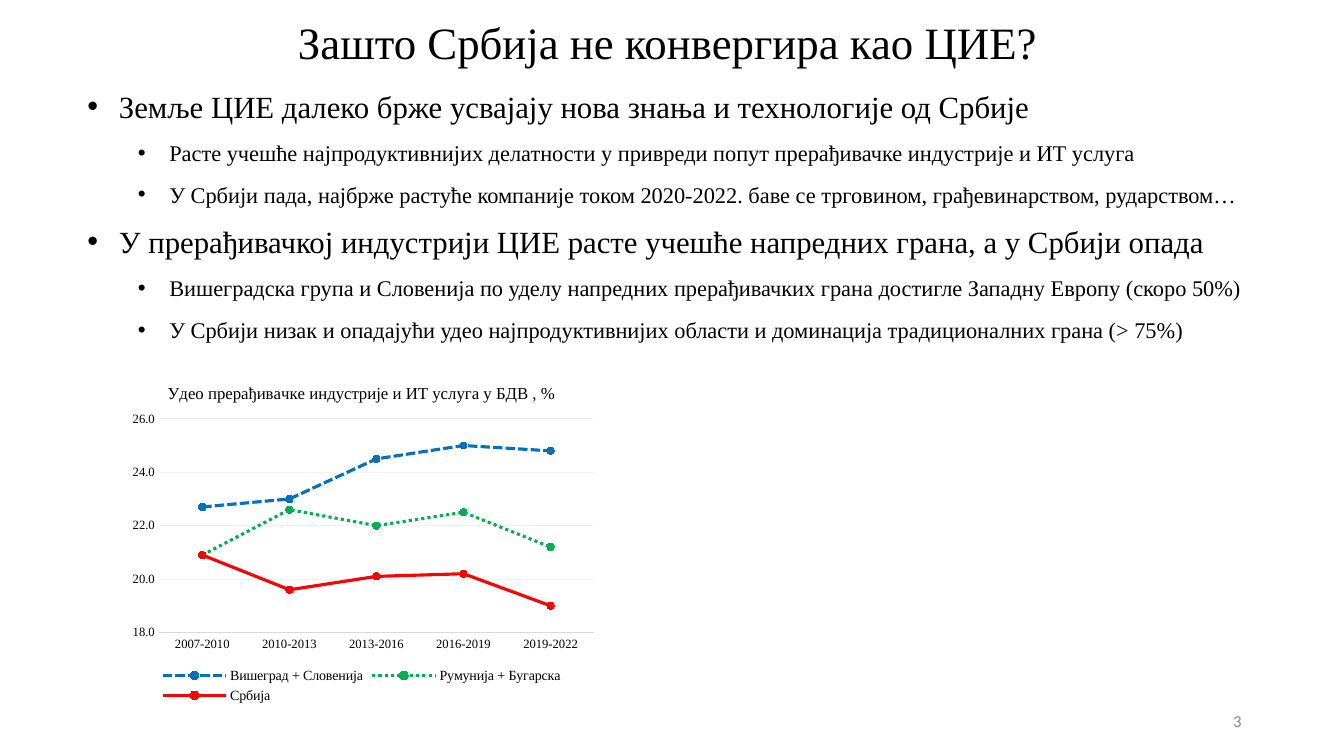
import pptx
import pptx.chart.data
import pptx.dml.color
import pptx.enum.chart
import pptx.enum.dml
import pptx.enum.text
import pptx.oxml
import pptx.util
from lxml import etree

Pt = pptx.util.Pt
ALIGN = pptx.enum.text.PP_ALIGN
ANCHOR = pptx.enum.text.MSO_ANCHOR
DASH = pptx.enum.dml.MSO_LINE
FONT = "Times New Roman"
COLORS = {
    "text": "000000", "number": "8C8C8C", "axis": "D9D9D9", "grid": "F2F2F2",
    "visegrad": "0070C0", "balkans": "00B050", "serbia": "FF0000",
}
WIDTH, HEIGHT = pptx.util.Inches(13.33), pptx.util.Inches(7.5)
COLUMNS, ROWS = 160, 90

BULLETS = [
    (0, "Земље ЦИЕ далеко брже усвајају нова знања и технологије од Србије"),
    (1, "Расте учешће најпродуктивнијих делатности у привреди попут прерађивачке индустрије и ИТ услуга"),
    (1, "У Србији пада, најбрже растуће компаније током 2020-2022. баве се трговином, грађевинарством, рударством…"),
    (0, "У прерађивачкој индустрији ЦИЕ расте учешће напредних грана, а у Србији опада"),
    (1, "Вишеградска група и Словенија по уделу напредних прерађивачких грана достигле Западну Европу (скоро 50%)"),
    (1, "У Србији низак и опадајући удео најпродуктивнијих области и доминација традиционалних грана (> 75%)"),
]
PERIODS = ["2007-2010", "2010-2013", "2013-2016", "2016-2019", "2019-2022"]
SERIES = [
    ("Вишеград + Словенија", [22.7, 23, 24.5, 25, 24.8], "visegrad", DASH.SQUARE_DOT),
    ("Румунија + Бугарска", [20.9, 22.6, 22, 22.5, 21.2], "balkans", DASH.ROUND_DOT),
    ("Србија", [20.9, 19.6, 20.1, 20.2, 19], "serbia", DASH.SOLID),
]


def grid_box(column, row, columns, rows):
    return (round(WIDTH * column / COLUMNS), round(HEIGHT * row / ROWS),
            round(WIDTH * columns / COLUMNS), round(HEIGHT * rows / ROWS))


def move(s, box):
    s.left, s.top, s.width, s.height = box


def rgb(name):
    return pptx.dml.color.RGBColor.from_string(COLORS[name])


def style_font(font, size, color="text", name=FONT):
    font.size, font.name, font.bold = Pt(size), name, False
    font.color.rgb = rgb(color)


def write(p, text, size, align=ALIGN.LEFT, **font):
    p.alignment = align
    r = p.add_run()
    r.text = text
    style_font(r.font, size, **font)


def set_bullet(p, left, hanging):
    """Give the paragraph a round bullet; lengths are in points."""
    pPr = p._p.get_or_add_pPr()
    pPr.set("marL", str(Pt(left)))
    pPr.set("indent", str(-Pt(hanging)))
    for tag, attribute, value in (("a:buFont", "typeface", "Arial"), ("a:buChar", "char", "•")):
        etree.SubElement(pPr, pptx.oxml.ns.qn(tag)).set(attribute, value)


def add_title(slide, box):
    s = slide.shapes.title
    move(s, box)
    tf = s.text_frame
    tf.vertical_anchor = ANCHOR.MIDDLE
    p = tf.paragraphs[0]
    p.line_spacing = 0.9
    write(p, "Зашто Србија не конвергира као ЦИЕ?", 32, ALIGN.CENTER)


def add_bullets(slide, box):
    s = slide.placeholders[1]
    move(s, box)
    tf = s.text_frame
    tf.word_wrap = True
    tf.auto_size = pptx.enum.text.MSO_AUTO_SIZE.NONE
    tf.vertical_anchor = ANCHOR.TOP
    for i, (level, text) in enumerate(BULLETS):
        p = tf.add_paragraph() if i else tf.paragraphs[0]
        p.level = level
        p.space_before = p.space_after = Pt(5.3)
        set_bullet(p, 22.5 + 36 * level, 22.5)
        write(p, text, 16 if level else 22, ALIGN.JUSTIFY)


def set_plot_area(chart, x, y, w, h):
    """Fix the inner plot area, as shares of the chart."""
    qn = pptx.oxml.ns.qn
    plot_area = chart._chartSpace.chart.plotArea
    for old in plot_area.findall(qn("c:layout")):
        plot_area.remove(old)
    layout = etree.Element(qn("c:layout"))
    plot_area.insert(0, layout)
    manual = etree.SubElement(layout, qn("c:manualLayout"))
    for tag, value in (("layoutTarget", "inner"), ("xMode", "edge"), ("yMode", "edge"),
                       ("x", x), ("y", y), ("w", w), ("h", h)):
        etree.SubElement(manual, qn("c:" + tag)).set("val", str(value))


def style_axes(chart):
    for axis in (chart.category_axis, chart.value_axis):
        axis.major_tick_mark = axis.minor_tick_mark = pptx.enum.chart.XL_TICK_MARK.NONE
        style_font(axis.tick_labels.font, 9)
    periods, shares = chart.category_axis, chart.value_axis
    periods.format.line.color.rgb = rgb("axis")
    periods.format.line.width = Pt(0.75)
    shares.minimum_scale, shares.maximum_scale, shares.major_unit = 18, 26, 2
    shares.tick_labels.number_format = "0.0"
    shares.tick_labels.number_format_is_linked = False
    shares.format.line.fill.background()
    shares.major_gridlines.format.line.color.rgb = rgb("grid")
    shares.major_gridlines.format.line.width = Pt(0.75)


def style_series(series, color, dash):
    series.smooth = False
    line, marker = series.format.line, series.marker
    line.color.rgb = rgb(color)
    line.width, line.dash_style = Pt(2.25), dash
    marker.style, marker.size = pptx.enum.chart.XL_MARKER_STYLE.CIRCLE, 5
    marker.format.fill.solid()
    marker.format.fill.fore_color.rgb = rgb(color)
    marker.format.line.color.rgb = rgb(color)


def add_share_chart(slide, box):
    data = pptx.chart.data.CategoryChartData(number_format="0.0")
    data.categories = PERIODS
    for name, values, _, _ in SERIES:
        data.add_series(name, values)
    kind = pptx.enum.chart.XL_CHART_TYPE.LINE_MARKERS
    chart = slide.shapes.add_chart(kind, *box, data).chart
    style_font(chart.font, 10)
    write(chart.chart_title.text_frame.paragraphs[0],
          "Удео прерађивачке индустрије и ИТ услуга у БДВ , %", 12, ALIGN.CENTER)
    chart.chart_title.include_in_layout = False
    chart.has_legend = True
    chart.legend.position = pptx.enum.chart.XL_LEGEND_POSITION.BOTTOM
    chart.legend.include_in_layout = False
    style_font(chart.legend.font, 10)
    chart.plots[0].vary_by_categories = False
    style_axes(chart)
    for series, (_, _, color, dash) in zip(chart.plots[0].series, SERIES):
        style_series(series, color, dash)
    set_plot_area(chart, 0.09, 0.15, 0.88, 0.63)


def add_slide_number(slide, box):
    tf = slide.shapes.add_textbox(*box).text_frame
    tf.word_wrap = True
    tf.vertical_anchor = ANCHOR.MIDDLE
    write(tf.paragraphs[0], "3", 12, ALIGN.RIGHT, color="number", name="Calibri")


def main():
    prs = pptx.Presentation()
    prs.slide_width, prs.slide_height = WIDTH, HEIGHT
    slide = prs.slides.add_slide(prs.slide_layouts[1])
    add_title(slide, grid_box(5, 2.2, 149, 6.2))
    add_slide_number(slide, grid_box(113, 83.4, 36, 4.8))
    add_share_chart(slide, grid_box(13.6, 43.8, 58.9, 40.4))
    add_bullets(slide, grid_box(9.2, 9.8, 143.2, 31.4))
    prs.save("out.pptx")


if __name__ == "__main__":
    main()
